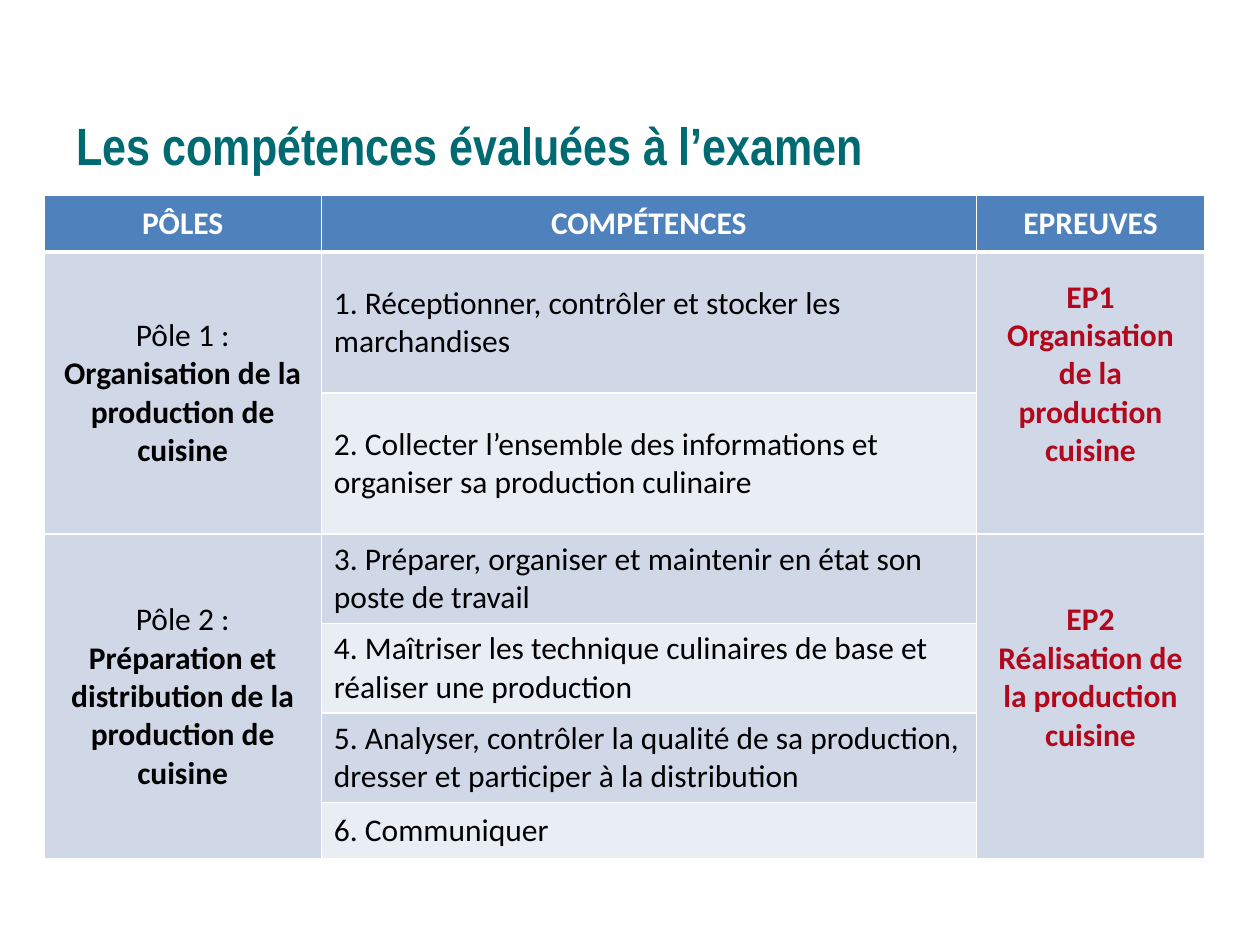
"""Slide listing the assessed skills by pole and by exam."""
from lxml import etree
from pptx import Presentation
from pptx import util as u
from pptx.dml.color import RGBColor
from pptx.enum import text
from pptx.oxml import ns

TEAL = RGBColor(0x00, 0x6A, 0x72)
BLUE = RGBColor(0x4F, 0x81, 0xBD)
BAND = RGBColor(0xD0, 0xD8, 0xE8)
PALE = RGBColor(0xE9, 0xED, 0xF4)
RED = RGBColor(0xB3, 0x07, 0x1B)
WHITE = RGBColor(0xFF, 0xFF, 0xFF)
BLACK = RGBColor(0, 0, 0)
CENTER = text.PP_ALIGN.CENTER
MIDDLE = text.MSO_ANCHOR.MIDDLE

COLS = [2.2, 5.2, 1.81]
ROWS = [0.45] + [1.12] * 2 + [0.71] * 3 + [0.45]
HEADERS = ["PÔLES", "COMPÉTENCES", "EPREUVES"]
SKILLS = [
    "1. Réceptionner, contrôler et stocker les marchandises",
    "2. Collecter l’ensemble des informations et organiser sa production culinaire",
    "3. Préparer, organiser et maintenir en état son poste de travail",
    "4. Maîtriser les technique culinaires de base et réaliser une production",
    "5. Analyser, contrôler la qualité de sa production, dresser et participer à la distribution",
    "6. Communiquer",
]
POLES = [
    (1, 2, "Pôle 1 :", "Organisation de la production de cuisine",
     ["EP1 Organisation de la production cuisine"]),
    (3, 6, "Pôle 2 :", "Préparation et distribution de la production de cuisine",
     ["EP2", "Réalisation de la production cuisine"]),
]


def write(p, words, size=18, font="Calibri", color=BLACK, bold=False, align=None):
    p.alignment = align
    r = p.add_run()
    r.text = words
    r.font.size, r.font.name, r.font.bold = u.Pt(size), font, bold
    r.font.color.rgb = color


def style(cell, fill, top, bottom):
    cell.fill.solid()
    cell.fill.fore_color.rgb = fill
    cell.vertical_anchor = MIDDLE
    tcPr = cell._tc.get_or_add_tcPr()
    for i, (side, width) in enumerate([("L", 1), ("R", 1), ("T", top), ("B", bottom)]):
        ln = etree.Element(ns.qn("a:ln" + side), w=str(u.Pt(width)))
        solid = etree.SubElement(ln, ns.qn("a:solidFill"))
        etree.SubElement(solid, ns.qn("a:srgbClr"), val=str(WHITE))
        tcPr.insert(i, ln)


prs = Presentation()
prs.slide_width, prs.slide_height = u.Inches(10), u.Inches(7.5)
s = prs.slides.add_slide(prs.slide_layouts[6])

tf = s.shapes.add_textbox(u.Inches(0.51), u.Inches(0.6), u.Inches(9), u.Inches(1.13)).text_frame
tf.word_wrap = True
tf.vertical_anchor = MIDDLE
tf.margin_top = tf.margin_bottom = 0
p = tf.paragraphs[0]
p.line_spacing = u.Pt(33)
write(p, "Les compétences évaluées à l’examen", size=30, font="Arial Narrow", color=TEAL, bold=True)

table = s.shapes.add_table(len(ROWS), len(COLS), u.Inches(0.35), u.Inches(1.55),
                           u.Inches(sum(COLS)), u.Inches(sum(ROWS))).table
for col, width in zip(table.columns, COLS):
    col.width = u.Inches(width)
for row, height in zip(table.rows, ROWS):
    row.height = u.Inches(height)

for i in range(len(ROWS)):
    for j in range(len(COLS)):
        fill = BLUE if i == 0 else PALE if j == 1 and i % 2 == 0 else BAND
        style(table.cell(i, j), fill, 3 if i == 1 else 1, 3 if i == 0 else 1)

for j, header in enumerate(HEADERS):
    write(table.cell(0, j).text_frame.paragraphs[0], header, color=WHITE, bold=True, align=CENTER)
for i, skill in enumerate(SKILLS, 1):
    write(table.cell(i, 1).text_frame.paragraphs[0], skill)

for first, last, label, name, exam in POLES:
    for j in (0, 2):
        table.cell(first, j).merge(table.cell(last, j))
    p = table.cell(first, 0).text_frame.paragraphs[0]
    write(p, label, align=CENTER)
    p.add_line_break()
    write(p, name, bold=True, align=CENTER)
    cell = table.cell(first, 2)
    cell.margin_bottom = u.Inches(0.35)
    tf = cell.text_frame
    for k, line in enumerate(exam):
        p = tf.add_paragraph() if k else tf.paragraphs[0]
        write(p, line, color=RED, bold=True, align=CENTER)

prs.save("out.pptx")
